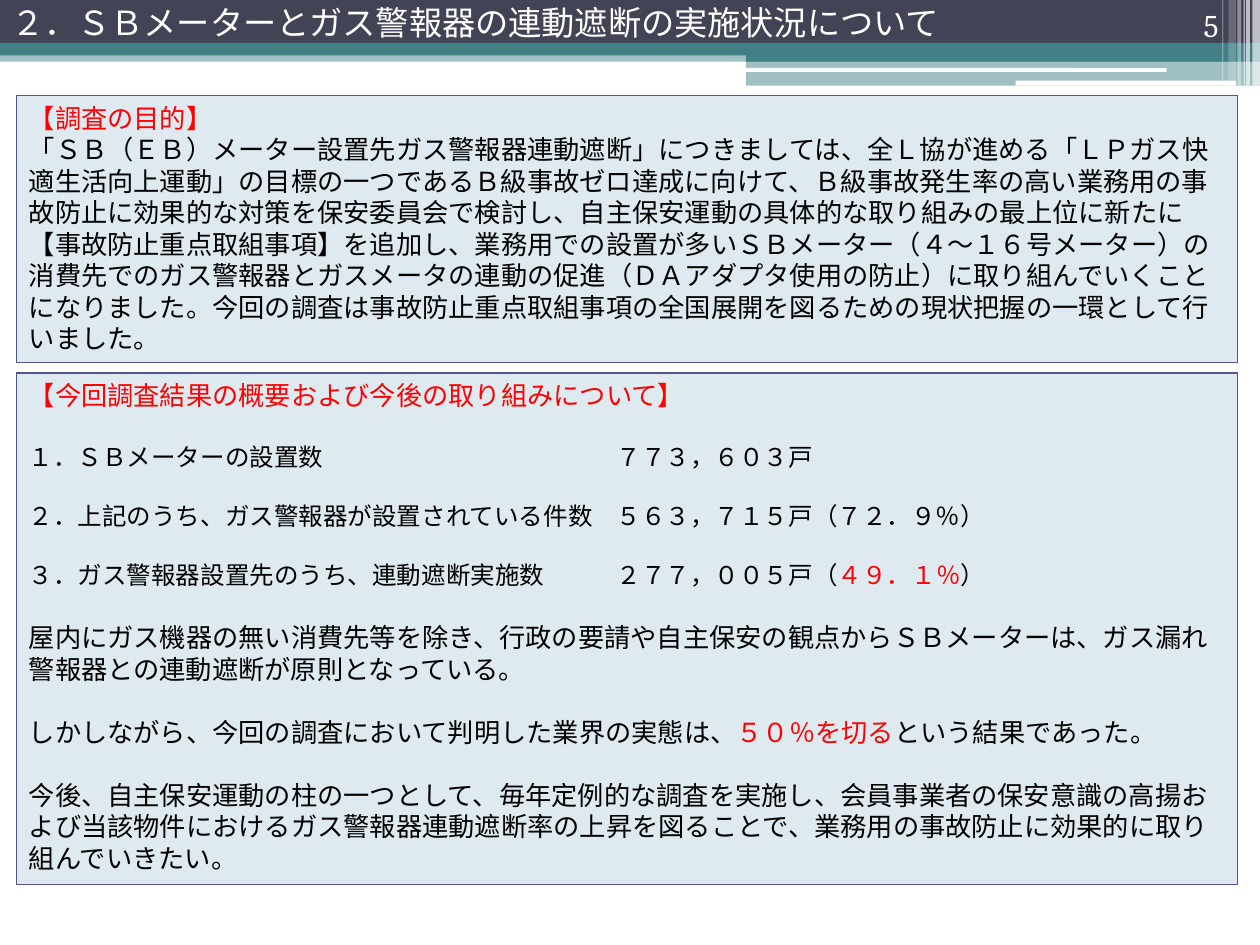
from dataclasses import dataclass
from typing import Optional

import pptx
import pptx.dml.color
import pptx.enum.shapes
import pptx.enum.text
import pptx.oxml.ns
import pptx.util
from lxml import etree

COLUMNS, ROWS = 1000, 750
CELL = pptx.util.Inches(0.01)
COLORS = {
    "navy": "424456", "teal": "438086", "white": "FFFFFF", "black": "000000",
    "red": "FF0000", "panel": "DEE9F0", "border": "53548A",
}
RECTANGLE = pptx.enum.shapes.MSO_SHAPE.RECTANGLE
ROUNDED = pptx.enum.shapes.MSO_SHAPE.ROUNDED_RECTANGLE
ANCHOR = pptx.enum.text.MSO_ANCHOR
ALIGN = pptx.enum.text.PP_ALIGN
FIGURE_TAB = pptx.util.Pt(24 * 14)  # 24 full-width characters


@dataclass(frozen=True)
class Area:
    column: float
    row: float
    columns: float
    rows: float

    def lengths(self) -> list[int]:
        return [round(n * CELL) for n in (self.column, self.row, self.columns, self.rows)]


@dataclass(frozen=True)
class Band:
    area: Area
    color: str
    opacity: int = 100
    kind: int = RECTANGLE


@dataclass(frozen=True)
class Line:
    """One paragraph; its phrases alternate between the main and the red colour."""
    phrases: tuple[str, ...]
    size: float = 15
    color: str = "black"
    gap: float = 0
    font: str = "Arial"
    align: Optional[int] = None


BANDS = [
    Band(Area(0, 40, 1000, 9), "teal", 50),
    Band(Area(0, 0, 1000, 34), "navy"),
    Band(Area(0, 34, 1000, 10), "teal"),
    Band(Area(592, 39, 408, 10), "teal"),
    Band(Area(592, 48, 408, 20), "teal", 50),
    Band(Area(591, 54, 335, 3), "white", kind=ROUNDED),
    Band(Area(806, 64, 175, 4), "white", kind=ROUNDED),
] + [
    Band(Area(column, 0, columns, rows), "white", opacity)
    for column, columns, rows, opacity in [
        (994, 6, 68, 65), (989, 3, 68, 65), (987, 1, 68, 60),
        (982, 3, 68, 40), (975, 6, 64, 20), (970, 1, 64, 30),
    ]
]

PURPOSE = [
    Line(("【調査の目的】",), color="red"),
    Line((
        "「ＳＢ（ＥＢ）メーター設置先ガス警報器連動遮断」につきましては、全Ｌ協が進める"
        "「ＬＰガス快適生活向上運動」の目標の一つであるＢ級事故ゼロ達成に向けて、"
        "Ｂ級事故発生率の高い業務用の事故防止に効果的な対策を保安委員会で検討し、"
        "自主保安運動の具体的な取り組みの最上位に新たに【事故防止重点取組事項】を追加し、"
        "業務用での設置が多いＳＢメーター（４～１６号メーター）の消費先での"
        "ガス警報器とガスメータの連動の促進（ＤＡアダプタ使用の防止）に取り組んでいくことになりました。"
        "今回の調査は事故防止重点取組事項の全国展開を図るための現状把握の一環として行いました。",)),
]

RESULTS = [
    Line(("【今回調査結果の概要および今後の取り組みについて】",), color="red"),
    Line(("１．ＳＢメーターの設置数\t７７３，６０３戸",), 14, gap=18),
    Line(("２．上記のうち、ガス警報器が設置されている件数\t５６３，７１５戸（７２．９％）",), 14, gap=17),
    Line(("３．ガス警報器設置先のうち、連動遮断実施数\t２７７，００５戸（", "４９．１％", "）"), 14, gap=17),
    Line((
        "屋内にガス機器の無い消費先等を除き、行政の要請や自主保安の観点からＳＢメーターは、"
        "ガス漏れ警報器との連動遮断が原則となっている。",), gap=18),
    Line(("しかしながら、今回の調査において判明した業界の実態は、", "５０％を切る",
          "という結果であった。"), gap=18),
    Line((
        "今後、自主保安運動の柱の一つとして、毎年定例的な調査を実施し、会員事業者の保安意識の高揚および"
        "当該物件におけるガス警報器連動遮断率の上昇を図ることで、"
        "業務用の事故防止に効果的に取り組んでいきたい。",), gap=18),
]


def rgb(color: str) -> pptx.dml.color.RGBColor:
    return pptx.dml.color.RGBColor.from_string(COLORS[color])


def draw_band(slide, band: Band):
    shape = slide.shapes.add_shape(band.kind, *band.area.lengths())
    shape.shadow.inherit = False
    shape.line.fill.background()
    shape.fill.solid()
    shape.fill.fore_color.rgb = rgb(band.color)
    if band.opacity < 100:
        color = shape.element.spPr.find(".//" + pptx.oxml.ns.qn("a:srgbClr"))
        etree.SubElement(color, pptx.oxml.ns.qn("a:alpha"), val=str(band.opacity * 1000))
    return shape


def add_tab_stop(paragraph, position: int) -> None:
    properties = paragraph._p.get_or_add_pPr()
    tabs = etree.Element(pptx.oxml.ns.qn("a:tabLst"))
    etree.SubElement(tabs, pptx.oxml.ns.qn("a:tab"), pos=str(position), algn="l")
    properties.find(pptx.oxml.ns.qn("a:defRPr")).addprevious(tabs)


def write_lines(shape, lines: list[Line], anchor: int) -> None:
    frame = shape.text_frame
    frame.word_wrap = True
    frame.vertical_anchor = anchor
    for index, line in enumerate(lines):
        paragraph = frame.add_paragraph() if index else frame.paragraphs[0]
        paragraph.alignment = line.align or ALIGN.LEFT
        paragraph.space_before = pptx.util.Pt(line.gap)
        paragraph.font.name = line.font
        paragraph.font.size = pptx.util.Pt(line.size)
        paragraph.font.color.rgb = rgb(line.color)
        for number, phrase in enumerate(line.phrases):
            run = paragraph.add_run()
            run.text = phrase
            if number % 2:
                run.font.color.rgb = rgb("red")
        if "\t" in line.phrases[0]:
            add_tab_stop(paragraph, FIGURE_TAB)


def draw_label(slide, area: Area, line: Line, anchor: int) -> None:
    write_lines(slide.shapes.add_textbox(*area.lengths()), [line], anchor)


def draw_panel(slide, area: Area, lines: list[Line]) -> None:
    shape = draw_band(slide, Band(area, "panel"))
    shape.line.color.rgb = rgb("border")
    shape.line.width = pptx.util.Pt(0.75)
    write_lines(shape, lines, ANCHOR.TOP)
    shape.text_frame.auto_size = pptx.enum.text.MSO_AUTO_SIZE.SHAPE_TO_FIT_TEXT


def main() -> None:
    presentation = pptx.Presentation()
    presentation.slide_width = COLUMNS * CELL
    presentation.slide_height = ROWS * CELL
    slide = presentation.slides.add_slide(presentation.slide_layouts[6])
    for band in BANDS:
        draw_band(slide, band)
    title = Line(("２．ＳＢメーターとガス警報器の連動遮断の実施状況について",), 19, "white")
    draw_label(slide, Area(-1, -1, 982, 37), title, ANCHOR.MIDDLE)
    draw_panel(slide, Area(13, 76, 969, 212), PURPOSE)
    draw_panel(slide, Area(13, 296, 969, 406), RESULTS)
    page = Line(("5",), 18, "white", font="Cambria", align=ALIGN.RIGHT)
    draw_label(slide, Area(894, 0, 83, 40), page, ANCHOR.BOTTOM)
    presentation.save("out.pptx")


if __name__ == "__main__":
    main()
